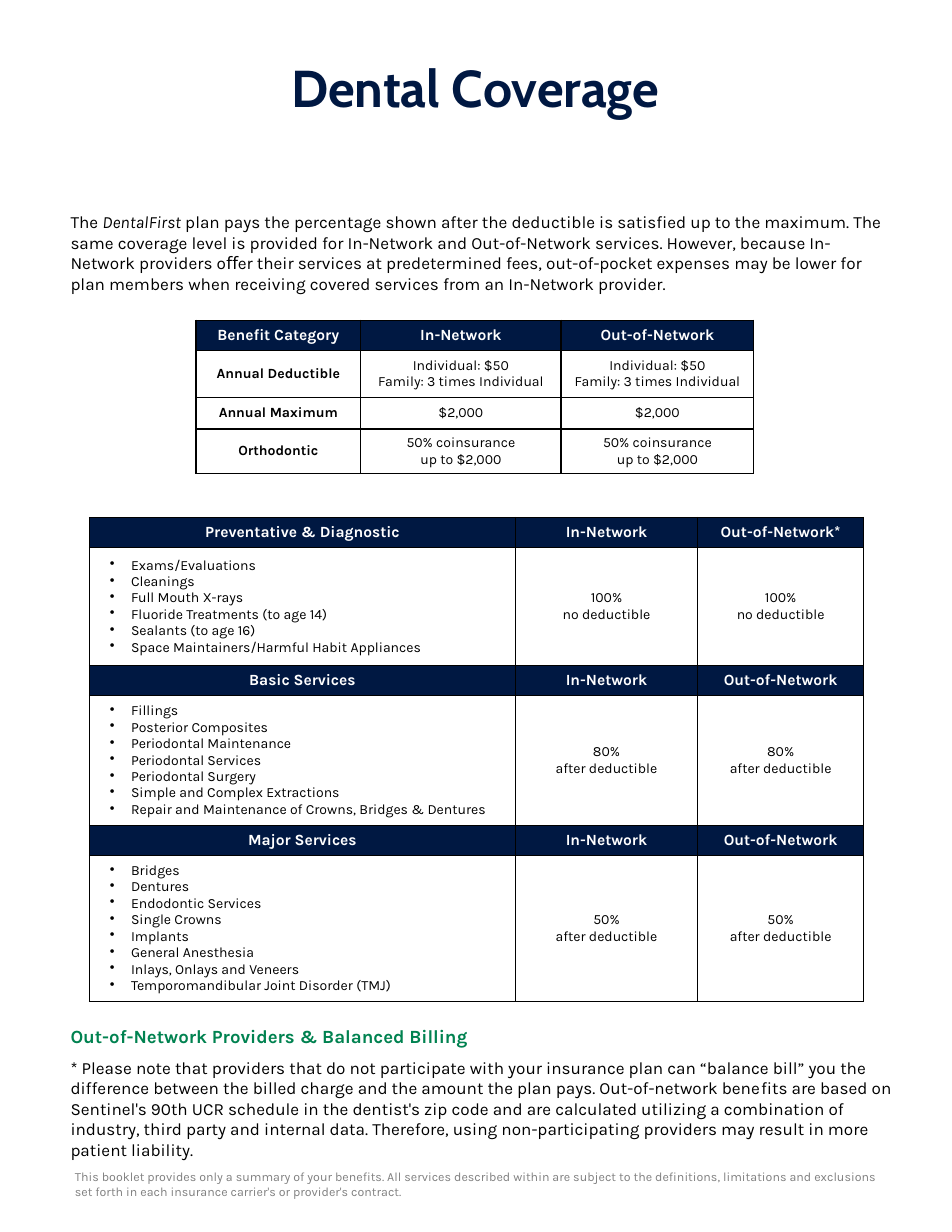
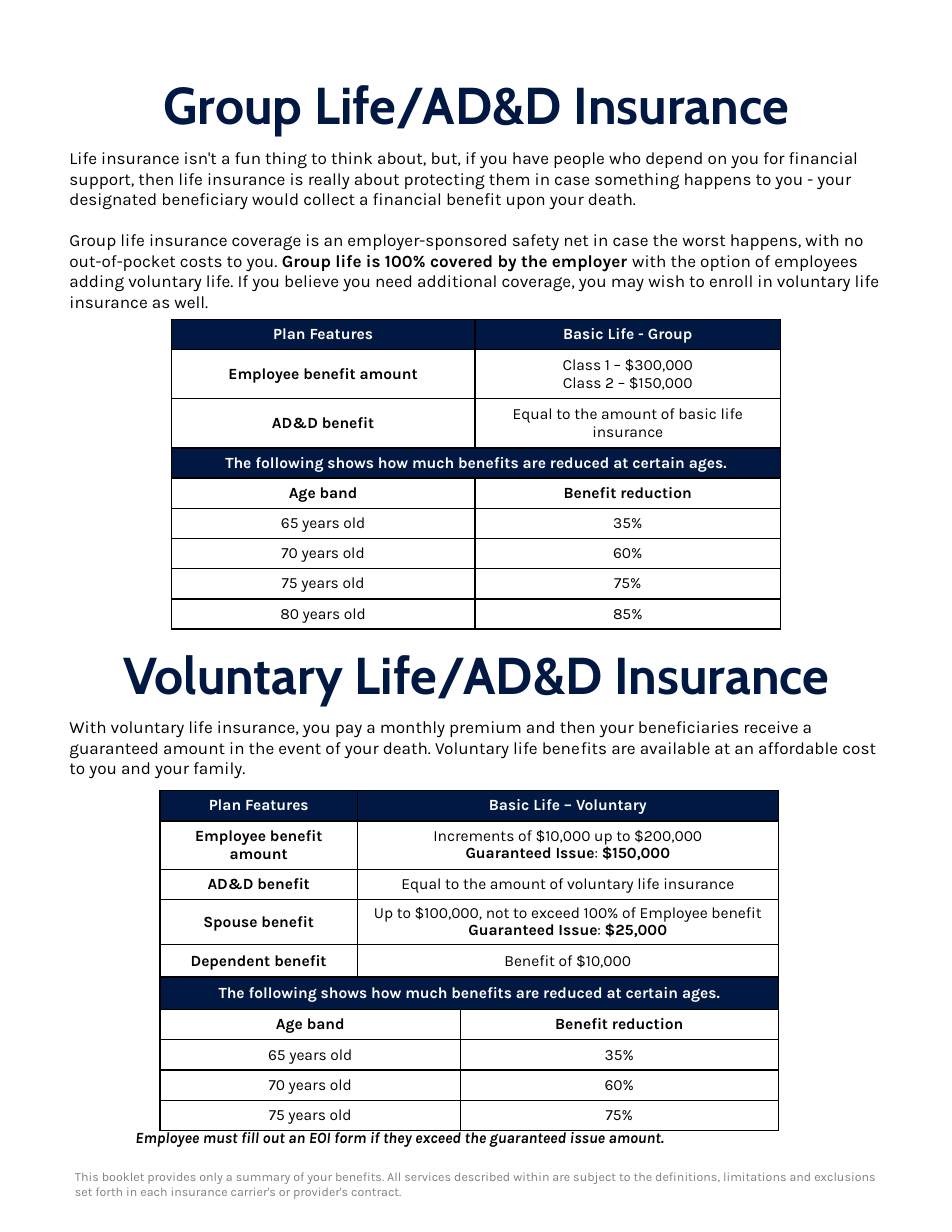
from dataclasses import dataclass
from typing import NamedTuple

from lxml.etree import SubElement as Sub
from pptx import Presentation
from pptx.dml.color import RGBColor as Rgb
from pptx.enum.text import MSO_ANCHOR as Anchor, PP_ALIGN as Align
from pptx.oxml.ns import qn
from pptx.util import Inches, Pt


class Font(NamedTuple):
    """A type style used for whole blocks of text."""
    size: float
    color: str = "000000"
    bold: bool = False
    italic: bool = False
    face: str = "Karla"


@dataclass(frozen=True)
class Theme:
    """Colours and type sizes shared by the slides."""
    navy: str = "001842"
    black: str = "000000"
    title: Font = Font(33.3, "001842", True, face="Cabin")
    prose: Font = Font(11)
    sub: Font = Font(12, "008250", True)
    note: Font = Font(10, bold=True, italic=True)
    foot: Font = Font(8, "808080")
    head: Font = Font(10, "FFFFFF", True)
    cell: Font = Font(10)
    small: Font = Font(9)


class Box(NamedTuple):
    """A rectangle in inches."""
    left: float
    top: float
    wide: float
    high: float

    def at(self, left, top, wide, high):
        """Return a box placed relative to this one."""
        return Box(self.left + left, self.top + top, wide, high)


LOOK = Theme()
PAGE = Box(0, 0, 8.5, 11)
PAD = Inches(0.05)
FOOT = ("This booklet provides only a summary of your beneﬁts. All services described within are "
        "subject to the deﬁnitions, limitations and exclusions set forth in each insurance "
        "carrier's or provider's contract.")
AGES = "The following shows how much benefits are reduced at certain ages."
CUTS = [("65 years old", "35%"), ("70 years old", "60%"),
        ("75 years old", "75%"), ("80 years old", "85%")]

PLAN = [
    ("head", 0.27, ["Benefit Category", "In-Network", "Out-of-Network"]),
    ("label", 0.42, ["Annual Deductible"] + ["Individual: $50\nFamily: 3 times Individual"] * 2),
    ("label", 0.28, ["Annual Maximum"] + ["$2,000"] * 2),
    ("label", 0.4, ["Orthodontic"] + ["50% coinsurance\nup to $2,000"] * 2),
]
CARE = [
    ("Preventative & Diagnostic", "*", 1.05, "100%\nno deductible",
     ["Exams/Evaluations", "Cleanings", "Full Mouth X-rays", "Fluoride Treatments (to age 14)",
      "Sealants (to age 16)", "Space Maintainers/Harmful Habit Appliances"]),
    ("Basic Services", "", 1.16, "80%\nafter deductible",
     ["Fillings", "Posterior Composites", "Periodontal Maintenance", "Periodontal Services",
      "Periodontal Surgery", "Simple and Complex Extractions",
      "Repair and Maintenance of Crowns, Bridges & Dentures"]),
    ("Major Services", "", 1.3, "50%\nafter deductible",
     ["Bridges", "Dentures", "Endodontic Services", "Single Crowns", "Implants",
      "General Anesthesia", "Inlays, Onlays and Veneers",
      "Temporomandibular Joint Disorder (TMJ)"]),
]
GROUP = [
    ("head", 0.27, ["Plan Features", "Basic Life - Group"]),
    ("label", 0.44, ["Employee benefit amount", "Class 1 – $300,000\nClass 2 – $150,000"]),
    ("label", 0.44, ["AD&D benefit", "Equal to the amount of basic life insurance"]),
    ("head", 0.27, [AGES, None]),
    ("bold", 0.27, ["Age band", "Benefit reduction"]),
] + [("plain", 0.27, [age, cut]) for age, cut in CUTS]
OWN = [
    ("head", 0.27, ["Plan Features", "Basic Life – Voluntary", None]),
    ("label", 0.43, ["Employee benefit amount", "Increments of $10,000 up to $200,000\n"
                     "|Guaranteed Issue|: |$150,000|", None]),
    ("label", 0.27, ["AD&D benefit", "Equal to the amount of voluntary life insurance", None]),
    ("label", 0.4, ["Spouse benefit", "Up to $100,000, not to exceed 100% of Employee benefit\n"
                    "|Guaranteed Issue|: |$25,000|", None]),
    ("label", 0.29, ["Dependent benefit", "Benefit of $10,000", None]),
    ("head", 0.29, [AGES, None, None]),
    ("bold", 0.27, ["Age band", None, "Benefit reduction"]),
] + [("plain", 0.27, [age, None, cut]) for age, cut in CUTS[:3]]


def write(frame, text, font, align=Align.LEFT, mark="bold"):
    """Write one paragraph per line and flip the mark between bars."""
    paras = []
    for row, line in enumerate(text.split("\n")):
        para = frame.add_paragraph() if row else frame.paragraphs[0]
        para.alignment = align
        paras.append(para)
        for turn, part in enumerate(line.split("|")):
            if not part:
                continue
            run = para.add_run()
            run.text = part
            run.font.name, run.font.size = font.face, Pt(font.size)
            run.font.bold, run.font.italic = font.bold, font.italic
            run.font.color.rgb = Rgb.from_string(font.color)
            if turn % 2:
                setattr(run.font, mark, True)
    return paras


def block(slide, box, text, font, align=Align.LEFT, mid=False, mark="bold"):
    """Add a wrapped text box and return its paragraphs."""
    frame = slide.shapes.add_textbox(*map(Inches, box)).text_frame
    frame.word_wrap = True
    frame.margin_top = frame.margin_bottom = PAD
    frame.margin_left = frame.margin_right = Inches(0.1) if mid else PAD
    frame.vertical_anchor = Anchor.MIDDLE if mid else Anchor.TOP
    return write(frame, text, font, align, mark)


def title(slide, box, text):
    """Add a large centred title."""
    block(slide, box, text, LOOK.title, Align.CENTER, True)


def footer(slide, box):
    """Add the grey summary notice at the foot of the page."""
    block(slide, box.at(0.57, 10.37, 7.46, 0.4), FOOT, LOOK.foot, mid=True)


def rule(cell):
    """Draw a thin black border on all sides of a cell."""
    props = cell._tc.get_or_add_tcPr()
    for side in ("lnL", "lnR", "lnT", "lnB"):
        line = Sub(props, qn("a:" + side), w=str(Pt(1)))
        Sub(Sub(line, qn("a:solidFill")), qn("a:srgbClr"), val=LOOK.black)


def bullet(para):
    """Give a paragraph a hanging round bullet."""
    props = para._p.get_or_add_pPr()
    props.set("marL", str(Inches(0.32)))
    props.set("indent", str(Inches(-0.19)))
    Sub(props, qn("a:buChar"), char="•")


def fill(cell, text, kind, first, font):
    """Style one cell by its row kind and write its text."""
    cell.margin_left = cell.margin_right = cell.margin_top = cell.margin_bottom = PAD
    cell.vertical_anchor = Anchor.MIDDLE
    rule(cell)
    if kind == "head":
        cell.fill.solid()
        cell.fill.fore_color.rgb = Rgb.from_string(LOOK.navy)
        font = LOOK.head
    else:
        cell.fill.background()
    if text is None:
        return
    if kind == "bold" or (kind == "label" and first):
        font = font._replace(bold=True)
    listed = kind == "list" and first
    for para in write(cell.text_frame, text, font, Align.LEFT if listed else Align.CENTER):
        if listed:
            bullet(para)
        if "|" in text:
            para.line_spacing = 0.9


def grid(slide, box, cols, rows, font):
    """Add a ruled table, where None joins a cell to the one on its left."""
    shape = slide.shapes.add_table(len(rows), len(cols), *map(Inches, box))
    table = shape.table
    table.first_row = table.horz_banding = False
    for col, wide in zip(table.columns, cols):
        col.width = Inches(wide)
    for row, (kind, high, texts) in enumerate(rows):
        table.rows[row].height = Inches(high)
        for col, text in enumerate(texts):
            fill(table.cell(row, col), text, kind, col == 0, font)
        start = 0
        for col in range(1, len(texts) + 1):
            if col == len(texts) or texts[col] is not None:
                if col - start > 1:
                    table.cell(row, start).merge(table.cell(row, col - 1))
                start = col


def dental(slide, box):
    """Lay out the dental page."""
    care = []
    for name, star, high, pay, items in CARE:
        care.append(("head", 0.27, [name, "In-Network", "Out-of-Network" + star]))
        care.append(("list", high, ["\n".join(items), pay, pay]))
    grid(slide, box.at(0.8, 4.62, 6.91, 4.3), [3.8, 1.63, 1.48], care, LOOK.small)
    footer(slide, box)
    grid(slide, box.at(1.75, 2.86, 4.98, 1.37), [1.47, 1.79, 1.72], PLAN, LOOK.small)
    block(slide, box.at(0.58, 1.84, 7.44, 0.85),
          "The |DentalFirst| plan pays the percentage shown after the deductible is satisﬁed up to "
          "the maximum. The same coverage level is provided for In-Network and Out-of-Network "
          "services. However, because In-Network providers oﬀer their services at predetermined "
          "fees, out-of-pocket expenses may be lower for plan members when receiving covered "
          "services from an In-Network provider.", LOOK.prose, mark="italic")
    title(slide, box.at(0.58, 0.48, 7.33, 0.59), "Dental Coverage")
    block(slide, box.at(0.58, 9.39, 7.46, 0.85),
          "* Please note that providers that do not participate with your insurance plan can "
          "“balance bill” you the difference between the billed charge and the amount the plan "
          "pays. Out-of-network benefits are based on Sentinel's 90th UCR schedule in the "
          "dentist's zip code and are calculated utilizing a combination of industry, third party "
          "and internal data. Therefore, using non-participating providers may result in more "
          "patient liability.", LOOK.prose)
    block(slide, box.at(0.58, 9.1, 7.44, 0.3),
          "Out-of-Network Providers & Balanced Billing", LOOK.sub)


def life(slide, box):
    """Lay out the life insurance page."""
    block(slide, box.at(0.57, 6.35, 7.36, 0.66),
          "With voluntary life insurance, you pay a monthly premium and then your beneﬁciaries "
          "receive a guaranteed amount in the event of your death. Voluntary life benefits are "
          "available at an affordable cost to you and your family.", LOOK.prose)
    grid(slide, box.at(1.43, 7.06, 5.52, 2.98), [1.76, 0.92, 2.84], OWN, LOOK.cell)
    block(slide, box.at(1.16, 10.02, 6.07, 0.29),
          "Employee must fill out an EOI form if they exceed the guaranteed issue amount.",
          LOOK.note)
    title(slide, box.at(0.48, 5.72, 7.55, 0.59), "Voluntary Life/AD&D Insurance")
    footer(slide, box)
    paras = block(
        slide, box.at(0.57, 1.27, 7.36, 1.58),
        "Life insurance isn't a fun thing to think about, but, if you have people who depend on "
        "you for ﬁnancial support, then life insurance is really about protecting them in case "
        "something happens to you - your designated beneﬁciary would collect a ﬁnancial beneﬁt "
        "upon your death.\n"
        "Group life insurance coverage is an employer-sponsored safety net in case the worst "
        "happens, with no out-of-pocket costs to you. |Group life is 100% covered by the employer "
        "|with the option of employees adding voluntary life. If you believe you need additional "
        "coverage, you may wish to enroll in voluntary life insurance as well.", LOOK.prose)
    paras[0].space_after = Pt(13)
    grid(slide, box.at(1.53, 2.85, 5.44, 2.77), [2.71, 2.73], GROUP, LOOK.cell)
    title(slide, box.at(0.48, 0.63, 7.55, 0.59), "Group Life/AD&D Insurance")


def main():
    """Build both pages and save the deck."""
    deck = Presentation()
    deck.slide_width, deck.slide_height = Inches(PAGE.wide), Inches(PAGE.high)
    for draw in (dental, life):
        draw(deck.slides.add_slide(deck.slide_layouts[6]), PAGE)
    deck.save("out.pptx")


if __name__ == "__main__":
    main()
